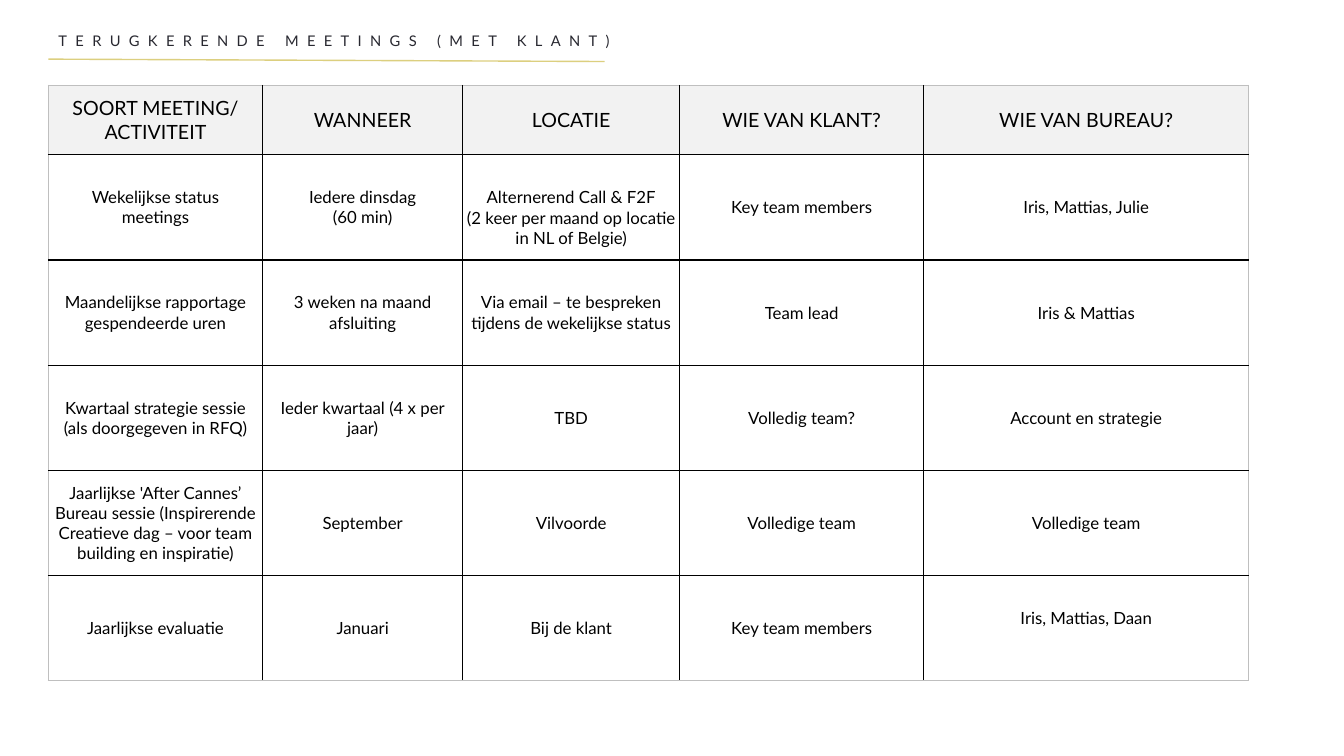
"""Builds a slide with a table of recurring client meetings."""
import pptx
import pptx.dml.color
import pptx.enum.shapes
import pptx.enum.text
import pptx.oxml
import pptx.oxml.ns
import pptx.util
from lxml import etree

Cm = pptx.util.Cm
Pt = pptx.util.Pt
RGBColor = pptx.dml.color.RGBColor
INK = RGBColor(0x28, 0x28, 0x30)
BLACK = RGBColor(0, 0, 0)
GOLD = RGBColor(0xDC, 0xCF, 0x7F)
HEADER_GREY = RGBColor(0xF2, 0xF2, 0xF2)
EDGE_GREY = RGBColor(0xBF, 0xBF, 0xBF)

LEFT = 1.22
COLUMN_WIDTHS = [5.4, 5.04, 5.47, 6.15, 8.19]
ROW_HEIGHTS = [1.75] + [2.65] * 5
ONE_LINE = 0.51
MEETINGS = [
    ["SOORT MEETING/ ACTIVITEIT", "WANNEER", "LOCATIE", "WIE VAN KLANT?", "WIE VAN BUREAU?"],
    ["Wekelijkse status\nmeetings", "Iedere dinsdag\n(60 min)",
     "Alternerend Call & F2F\n(2 keer per maand op locatie in NL of Belgie)",
     "Key team members", "Iris, Mattias, Julie"],
    ["Maandelijkse rapportage gespendeerde uren", "3 weken na maand afsluiting",
     "Via email – te bespreken tijdens de wekelijkse status", "Team lead", "Iris & Mattias"],
    ["Kwartaal strategie sessie (als doorgegeven in RFQ)", "Ieder kwartaal (4 x per jaar)",
     "TBD", "Volledig team?", "Account en strategie"],
    ["Jaarlijkse 'After Cannes’ Bureau sessie (Inspirerende Creatieve dag – voor team "
     "building en inspiratie)", "September", "Vilvoorde", "Volledige team", "Volledige team"],
    ["Jaarlijkse evaluatie", "Januari", "Bij de klant", "Key team members",
     "Iris, Mattias, Daan"],
]


class MeetingPage:
    """Holds the style and the current slide."""

    font_name = "Lato"

    def __init__(self, deck):
        self.page = deck.slides.add_slide(deck.slide_layouts[5])

    def style(self, paragraph, size, color):
        paragraph.font.name = self.font_name
        paragraph.font.size = Pt(size)
        paragraph.font.color.rgb = color

    def title(self, text, left, top, width, height):
        box = self.page.shapes.title
        box.left, box.top, box.width, box.height = Cm(left), Cm(top), Cm(width), Cm(height)
        frame = box.text_frame
        frame.text = text
        frame.auto_size = pptx.enum.text.MSO_AUTO_SIZE.NONE
        frame.vertical_anchor = pptx.enum.text.MSO_ANCHOR.MIDDLE
        frame.margin_top = frame.margin_bottom = 0
        paragraph = frame.paragraphs[0]
        paragraph.alignment = pptx.enum.text.PP_ALIGN.LEFT
        paragraph.line_spacing = 0.9
        self.style(paragraph, 10.5, INK)
        paragraph.runs[0].font._element.set("spc", "600")

    def line(self, start, end, color):
        connector = self.page.shapes.add_connector(
            pptx.enum.shapes.MSO_CONNECTOR.STRAIGHT, *map(Cm, start + end))
        connector.line.color.rgb = color
        connector.line.width = Pt(1)
        etree.SubElement(connector._element.spPr, pptx.oxml.ns.qn("a:effectLst"))

    def border(self, cell, side, color, width):
        cell._tc.get_or_add_tcPr().append(pptx.oxml.parse_xml(
            f'<a:ln{side} {pptx.oxml.ns.nsdecls("a")} w="{Pt(width)}">'
            f'<a:solidFill><a:srgbClr val="{color}"/></a:solidFill></a:ln{side}>'))

    def cell(self, cell, text, is_header, outer_sides):
        cell.text = text
        cell.vertical_anchor = pptx.enum.text.MSO_ANCHOR.MIDDLE
        cell.margin_left = cell.margin_right = Cm(0.09)
        cell.margin_top = cell.margin_bottom = Cm(0.03)
        for side in "LRTB":
            outer = side in outer_sides
            self.border(cell, side, EDGE_GREY if outer else BLACK, 0.75 if outer else 1)
        if is_header:
            cell.fill.solid()
            cell.fill.fore_color.rgb = HEADER_GREY
        else:
            cell.fill.background()
        for paragraph in cell.text_frame.paragraphs:
            paragraph.alignment = pptx.enum.text.PP_ALIGN.CENTER
            self.style(paragraph, 14 if is_header else 12, BLACK)

    def table(self, rows, left, top, widths, heights):
        table = self.page.shapes.add_table(
            len(rows), len(widths), Cm(left), Cm(top), Cm(sum(widths)), Cm(sum(heights))).table
        table.first_row = table.horz_banding = False
        for column, width in zip(table.columns, widths):
            column.width = Cm(width)
        for row, height in zip(table.rows, heights):
            row.height = Cm(height)
        last_row, last_column = len(rows) - 1, len(widths) - 1
        for i, texts in enumerate(rows):
            for j, text in enumerate(texts):
                edges = {"L": j == 0, "R": j == last_column, "T": i == 0, "B": i == last_row}
                outer_sides = [side for side, outer in edges.items() if outer]
                self.cell(table.cell(i, j), text, i == 0, outer_sides)
        return table


def main():
    deck = pptx.Presentation()
    deck.slide_width, deck.slide_height = Cm(33.87), Cm(19.05)
    meeting_page = MeetingPage(deck)
    meeting_page.title("TERUGKERENDE MEETINGS (MET KLANT)", LEFT, 0.7, 19.63, 0.69)
    meeting_page.line((LEFT, 1.49), (15.24, 1.55), GOLD)
    table = meeting_page.table(MEETINGS, LEFT, 2.15, COLUMN_WIDTHS, ROW_HEIGHTS)
    table.cell(1, 2).margin_top += Cm(ONE_LINE)
    table.cell(5, 4).margin_bottom += Cm(ONE_LINE)
    deck.save("out.pptx")


if __name__ == "__main__":
    main()
